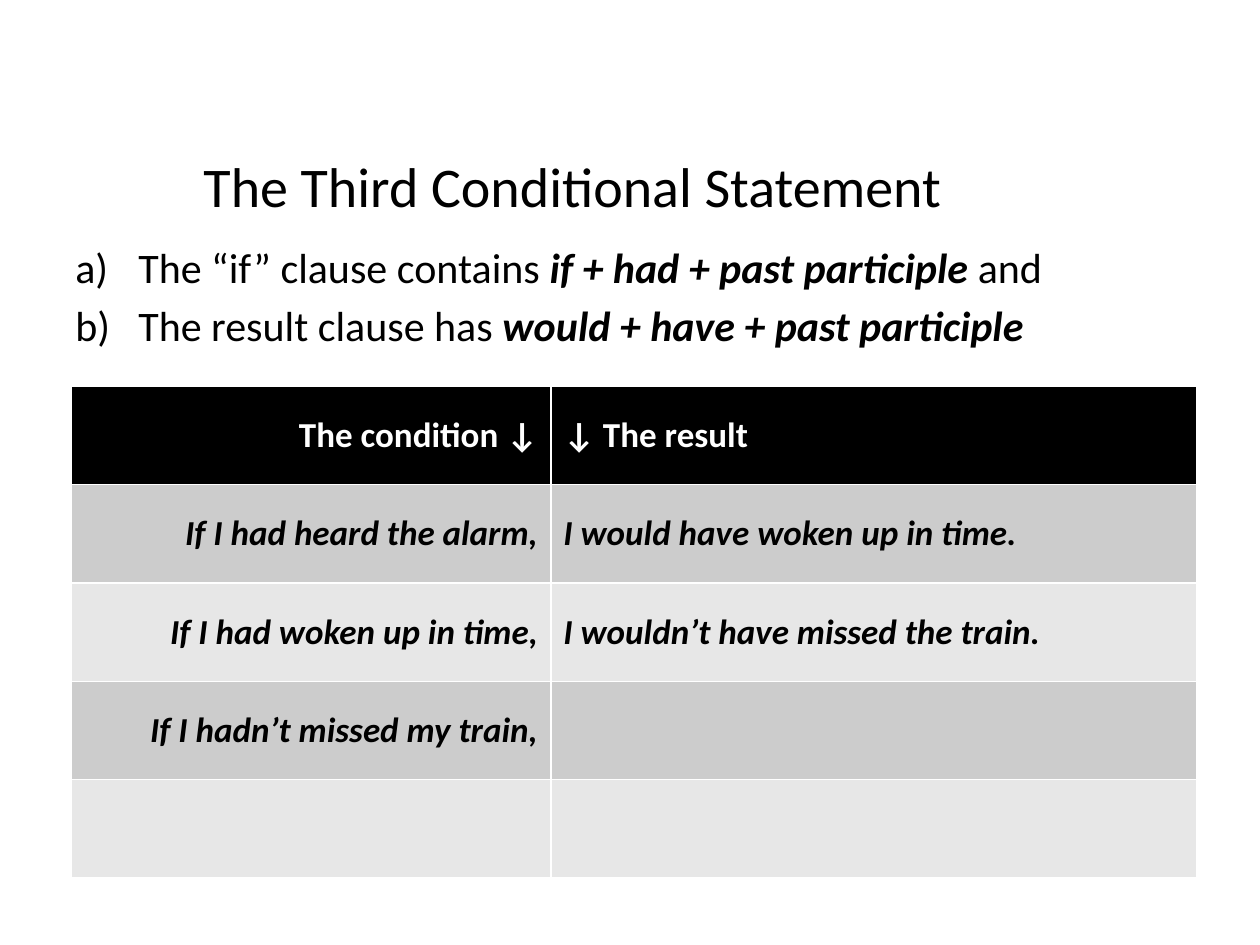
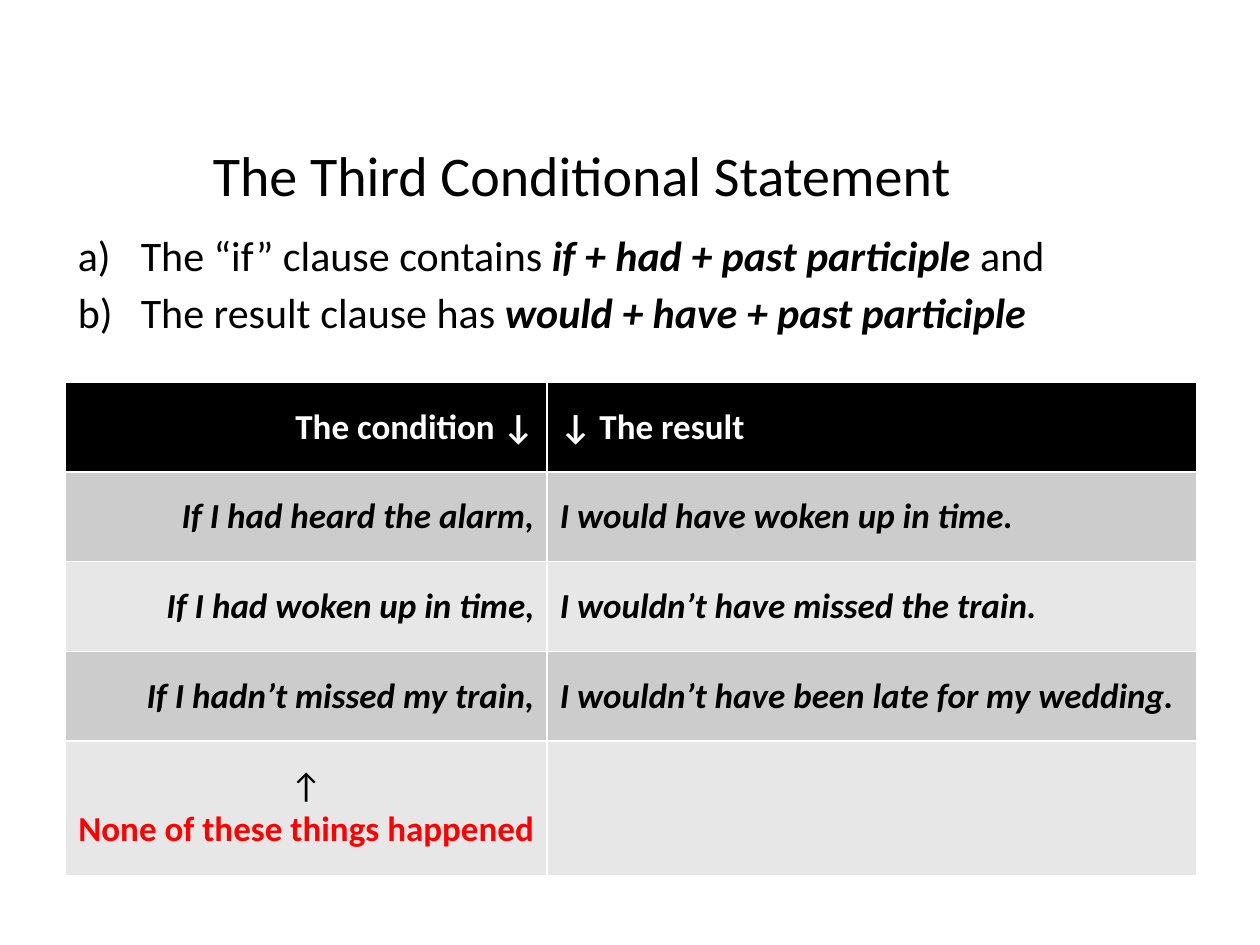
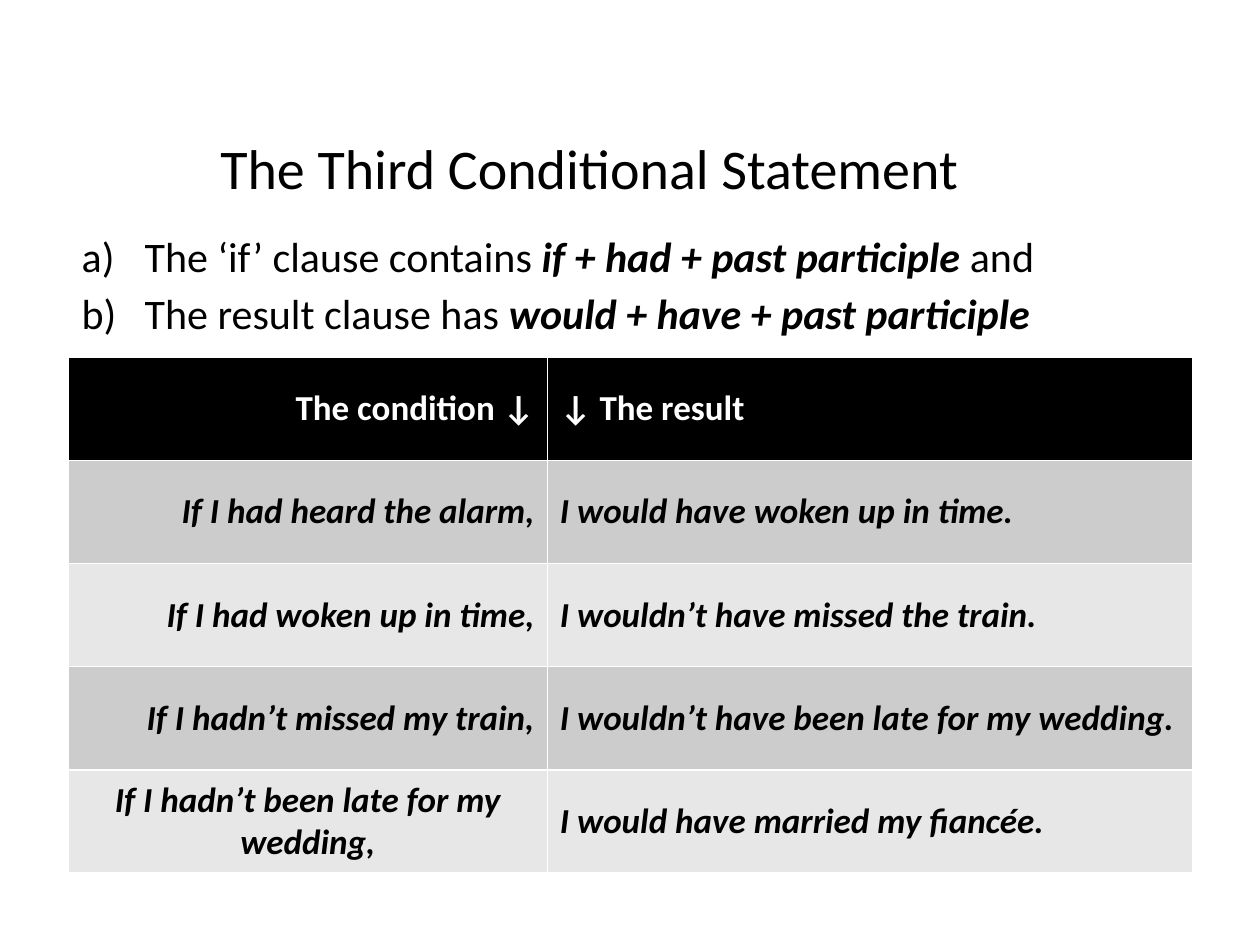
import pptx
import pptx.dml.color
import pptx.enum.text
import pptx.oxml
import pptx.oxml.ns
import pptx.util

Pt = pptx.util.Pt
ALIGN = pptx.enum.text.PP_ALIGN
MIDDLE = pptx.enum.text.MSO_ANCHOR.MIDDLE

BLACK, WHITE, RED = "000000", "FFFFFF", "FF0000"
BANDS = ("CCCCCC", "E7E7E7")
TITLE = "The Third Conditional Statement"
HEADINGS = ("The condition ↓", "↓ The result")
ALARM = ("If I had heard the alarm,", "I would have woken up in time.")
TRAIN = ("If I had woken up in time,", "I wouldn’t have missed the train.")
MISSED = "If I hadn’t missed my train,"
LATE = "I wouldn’t have been late for my wedding."


def color(hex_code):
    return pptx.dml.color.RGBColor.from_string(hex_code)


def border(side):
    return pptx.oxml.parse_xml(
        f'<a:{side} {pptx.oxml.ns.nsdecls("a")} w="{Pt(1)}">'
        f'<a:solidFill><a:srgbClr val="{WHITE}"/></a:solidFill></a:{side}>')


class Lesson:
    font_name = "Calibri"
    condition_share = 0.426

    def __init__(self):
        self.deck = pptx.Presentation()
        self.deck.slide_width, self.deck.slide_height = Pt(720), Pt(540)
        self.slide = None

    def new_slide(self):
        self.slide = self.deck.slides.add_slide(self.deck.slide_layouts[6])

    def style(self, run, size, hex_code=BLACK, bold=False, italic=False):
        font = run.font
        font.name, font.size = self.font_name, Pt(size)
        font.bold, font.italic = bold, italic
        font.color.rgb = color(hex_code)

    def text_frame(self, left, top, width, height):
        box = self.slide.shapes.add_textbox(Pt(left), Pt(top), Pt(width), Pt(height))
        box.text_frame.word_wrap = True
        return box.text_frame

    def title(self, left, top, width, height):
        frame = self.text_frame(left, top, width, height)
        frame.text = TITLE
        heading = frame.paragraphs[0]
        heading.alignment = ALIGN.CENTER
        self.style(heading.runs[0], 32)

    def rules(self, left, top, if_word):
        """Lettered list; every second run of a rule is the emphasised pattern."""
        frame = self.text_frame(left, top, 648, 432)
        rules = ((f"The {if_word} clause contains ", "if + had + past participle ", "and"),
                 ("The result clause has ", "would + have + past participle"))
        for index, parts in enumerate(rules):
            rule = frame.add_paragraph() if index else frame.paragraphs[0]
            properties = rule._p.get_or_add_pPr()
            properties.set("marL", str(Pt(36)))
            properties.set("indent", str(-Pt(36)))
            properties.append(pptx.oxml.parse_xml(
                f'<a:buAutoNum {pptx.oxml.ns.nsdecls("a")} type="alphaLcParenR"/>'))
            if index:
                rule.space_before = Pt(4)
            for position, part in enumerate(parts):
                run = rule.add_run()
                run.text = part
                pattern = position % 2 == 1
                self.style(run, 24, bold=pattern, italic=pattern)

    def write_cell(self, cell, text, align, hex_code=BLACK, italic=True):
        cell.text_frame.text = text
        for line in cell.text_frame.paragraphs:
            line.alignment = align
            for run in line.runs:
                self.style(run, 20, hex_code, bold=True, italic=italic)

    def conditionals(self, left, top, width, height, sentences, last_weight=1):
        """Table of condition and result; last_weight is the last row's height in rows."""
        rows = [HEADINGS, *sentences]
        table = self.slide.shapes.add_table(
            len(rows), 2, Pt(left), Pt(top), Pt(width), Pt(height)).table
        for column, share in zip(table.columns, (self.condition_share, 1 - self.condition_share)):
            column.width = Pt(width * share)
        unit = height / (len(rows) - 1 + last_weight)
        for index, texts in enumerate(rows):
            last = index == len(rows) - 1
            table.rows[index].height = Pt(unit * (last_weight if last else 1))
            fill = BANDS[(index - 1) % 2] if index else BLACK
            for cell, text, align in zip(table.rows[index].cells, texts,
                                         (ALIGN.CENTER if last else ALIGN.RIGHT, ALIGN.LEFT)):
                cell.vertical_anchor = MIDDLE
                for side in ("lnL", "lnR", "lnT", "lnB"):
                    cell._tc.get_or_add_tcPr().append(border(side))
                cell.fill.solid()
                cell.fill.fore_color.rgb = color(fill)
                if text:
                    self.write_cell(cell, text, align, BLACK if index else WHITE, index > 0)
        return table


def main():
    lesson = Lesson()

    lesson.new_slide()
    lesson.title(13, 82.8, 628.6, 74.2)
    lesson.rules(36, 134.6, "“if”")
    lesson.conditionals(40.7, 220.6, 643.3, 281.2, (ALARM, TRAIN, (MISSED, ""), ("", "")))

    lesson.new_slide()
    lesson.title(18.7, 77, 627.8, 82)
    lesson.rules(37.4, 127.4, "“if”")
    summary = lesson.conditionals(
        37.4, 218.4, 646.3, 282,
        (ALARM, TRAIN, (MISSED, LATE), ("↑\nNone of these things happened", "")), 1.5)
    arrow, verdict = summary.cell(4, 0).text_frame.paragraphs
    lesson.style(arrow.runs[0], 20)
    lesson.style(verdict.runs[0], 20, RED, bold=True)

    lesson.new_slide()
    lesson.title(33.8, 72.7, 606.2, 90)
    lesson.rules(39.6, 128.2, "‘if’")
    lesson.conditionals(
        39, 204, 642.6, 295,
        (ALARM, TRAIN, (MISSED, LATE),
         ("If I hadn’t been late for my wedding,", "I would have married my fiancée.")))

    lesson.deck.save("out.pptx")


if __name__ == "__main__":
    main()
